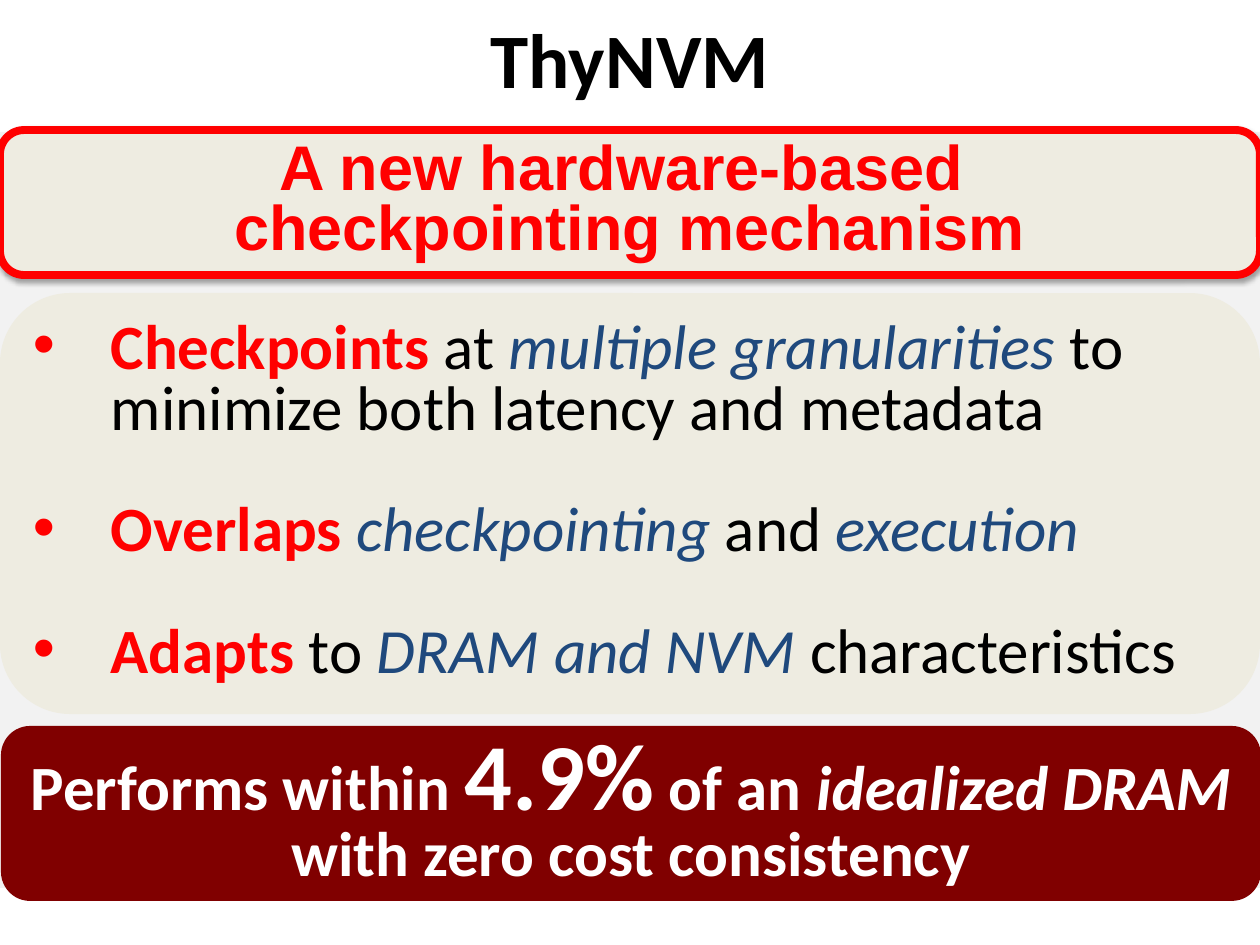
import pptx
import pptx.dml.color
import pptx.enum.shapes
import pptx.enum.text
import pptx.oxml
import pptx.oxml.ns
import pptx.util

RGB = pptx.dml.color.RGBColor
BLACK = RGB(0x00, 0x00, 0x00)
WHITE = RGB(0xFF, 0xFF, 0xFF)
RED = RGB(0xFF, 0x00, 0x00)
BLUE = RGB(0x1F, 0x49, 0x7D)
MAROON = RGB(0x80, 0x00, 0x00)
CREAM = RGB(0xEE, 0xEC, 0xE1)
GREY = RGB(0xF2, 0xF2, 0xF2)

RECT = pptx.enum.shapes.MSO_SHAPE.RECTANGLE
ROUNDED = pptx.enum.shapes.MSO_SHAPE.ROUNDED_RECTANGLE
CENTER = pptx.enum.text.PP_ALIGN.CENTER
LEFT = pptx.enum.text.PP_ALIGN.LEFT
MIDDLE = pptx.enum.text.MSO_ANCHOR.MIDDLE

EMU_PER_PX = 914400 / 126
SLIDE_W, SLIDE_H = 1260, 945
HANGING_INDENT = 78

# Run formats
PLAIN = {"color": BLACK}
KEYWORD = {"color": RED, "bold": True}
EMPHASIS = {"color": BLUE, "italic": True}
TITLE = {"color": BLACK, "bold": True, "size": 44}
HEADLINE = {"color": RED, "bold": True, "name": "Arial"}
RESULT = {"color": WHITE, "bold": True}

MECHANISM = ["A new hardware-based ", "checkpointing mechanism"]
FEATURES = [
    [("Checkpoints ", KEYWORD), ("at ", PLAIN), ("multiple granularities ", EMPHASIS),
     ("to minimize both latency and metadata", PLAIN)],
    [("Overlaps ", KEYWORD), ("checkpointing", EMPHASIS), (" and ", PLAIN),
     ("execution", EMPHASIS)],
    [("Adapts", KEYWORD), (" to ", PLAIN), ("DRAM and NVM ", EMPHASIS),
     ("characteristics", PLAIN)],
]
PERFORMANCE = [
    ("Performs within ", RESULT), ("4.9%", {**RESULT, "size": 54}), (" of an ", RESULT),
    ("idealized DRAM ", {**RESULT, "italic": True}), ("with zero cost consistency", RESULT),
]


def px(length):
    return pptx.util.Emu(round(length * EMU_PER_PX))


def add_panel(slide, kind, box, fill):
    panel = slide.shapes.add_shape(kind, *map(px, box))
    panel.shadow.inherit = False
    panel.fill.solid()
    panel.fill.fore_color.rgb = fill
    panel.line.fill.background()
    return panel


def add_drop_shadow(panel):
    effects = panel._element.spPr.find(pptx.oxml.ns.qn("a:effectLst"))
    effects.append(pptx.oxml.parse_xml(
        f'<a:outerShdw {pptx.oxml.ns.nsdecls("a")} blurRad="{pptx.util.Pt(3.1)}" '
        f'dist="{pptx.util.Pt(1.8)}" dir="5400000" rotWithShape="0">'
        '<a:srgbClr val="000000"><a:alpha val="35000"/></a:srgbClr></a:outerShdw>'))


def add_run(paragraph, text, style):
    run = paragraph.add_run()
    run.text = text
    font_format = {"name": "Calibri", "size": 36, "bold": False, "italic": False, **style}
    font_format["size"] = pptx.util.Pt(font_format["size"])
    run.font.color.rgb = font_format.pop("color")
    for attribute, value in font_format.items():
        setattr(run.font, attribute, value)


def write_text(shape, paragraphs, align=CENTER, spacing=0.8, gap=0):
    frame = shape.text_frame
    frame.word_wrap = True
    frame.vertical_anchor = MIDDLE
    for index, runs in enumerate(paragraphs):
        paragraph = frame.add_paragraph() if index else frame.paragraphs[0]
        paragraph.alignment = align
        paragraph.line_spacing = spacing
        paragraph.space_before = pptx.util.Pt(gap if index else 0)
        for text, style in runs:
            add_run(paragraph, text, style)


def add_bullets(shape, color):
    for paragraph in shape.text_frame.paragraphs:
        properties = paragraph._p.get_or_add_pPr()
        properties.set("marL", str(px(HANGING_INDENT)))
        properties.set("indent", str(-px(HANGING_INDENT)))
        for tag in (f'buClr {{}}><a:srgbClr val="{color}"/></a:buClr>',
                    'buFont {} typeface="Arial"/>', 'buChar {} char="•"/>'):
            properties.append(pptx.oxml.parse_xml(
                "<a:" + tag.format(pptx.oxml.ns.nsdecls("a"))))


def place_title(slide, text, box):
    title = slide.shapes.title
    title.left, title.top, title.width, title.height = map(px, box)
    write_text(title, [[(text, TITLE)]], spacing=1.0)


def main():
    deck = pptx.Presentation()
    deck.slide_width, deck.slide_height = px(SLIDE_W), px(SLIDE_H)
    slide = deck.slides.add_slide(deck.slide_layouts[5])

    # Backdrop and title
    add_panel(slide, RECT, (0, 132, SLIDE_W, 756), GREY)
    place_title(slide, "ThyNVM", (0, -21, SLIDE_W, 157))

    # Outlined headline
    mechanism = add_panel(slide, ROUNDED, (0, 130, SLIDE_W, 145), CREAM)
    mechanism.line.color.rgb = RED
    mechanism.line.width = pptx.util.Pt(4.5)
    add_drop_shadow(mechanism)
    write_text(mechanism, [[(line, HEADLINE)] for line in MECHANISM])

    # Feature list
    features = add_panel(slide, ROUNDED, (0, 293, SLIDE_W, 421), CREAM)
    write_text(features, FEATURES, align=LEFT, gap=35)
    add_bullets(features, RED)

    # Performance result
    performance = add_panel(slide, ROUNDED, (1, 726, SLIDE_W, 175), MAROON)
    write_text(performance, [PERFORMANCE])

    deck.save("out.pptx")


if __name__ == "__main__":
    main()
